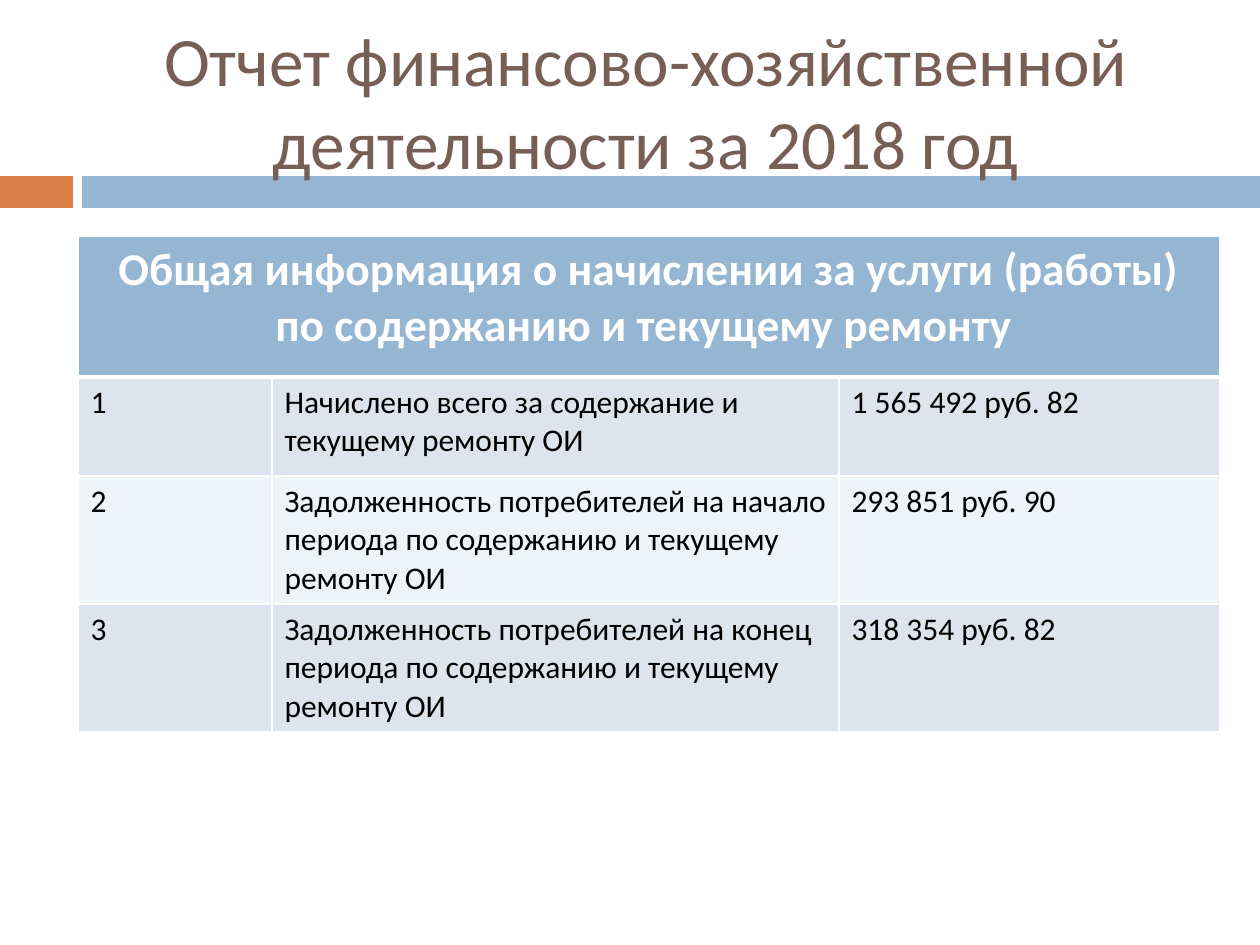
from dataclasses import dataclass

from lxml import etree
from pptx import Presentation
from pptx.dml.color import RGBColor
from pptx.enum.shapes import MSO_SHAPE
from pptx.enum.text import MSO_ANCHOR, PP_ALIGN
from pptx.oxml.ns import qn
from pptx.util import Pt

RECT = MSO_SHAPE.RECTANGLE
MIDDLE = MSO_ANCHOR.MIDDLE
CENTER, LEFT = PP_ALIGN.CENTER, PP_ALIGN.LEFT
EMU_PER_PX = 914400 / 126


@dataclass(frozen=True)
class Theme:
    font: str = "Calibri"
    title: str = "775F55"
    accent: str = "DD8047"
    main: str = "94B6D2"
    white: str = "FFFFFF"
    black: str = "000000"
    bands: tuple = ("DCE5EE", "EEF3F7")
    title_size: float = 39.6
    header_size: int = 26
    body_size: int = 18


THEME = Theme()
TITLE = "Отчет финансово-хозяйственной деятельности за 2018 год"
HEADER = "Общая информация о начислении за услуги (работы) по содержанию и текущему ремонту "
CHARGES = [
    ("1", "Начислено всего за содержание и текущему ремонту ОИ", "1 565 492 руб. 82"),
    ("2", "Задолженность потребителей на начало периода по содержанию и текущему ремонту ОИ", "293 851 руб. 90"),
    ("3", "Задолженность потребителей на конец периода по содержанию и текущему ремонту ОИ", "318 354 руб. 82"),
]


def px(n):
    return round(n * EMU_PER_PX)


def set_text(tf, text, size, color, align=LEFT, bold=False):
    tf.text = text
    tf.word_wrap = True
    p = tf.paragraphs[0]
    p.alignment = align
    font = p.runs[0].font
    font.name, font.size, font.bold = THEME.font, Pt(size), bold
    font.color.rgb = RGBColor.from_string(color)


def add_band(s, x, y, w, h):
    accent_w, gap = 73, 9
    main_x = accent_w + gap
    for left, width, color in (
        (x, accent_w, THEME.accent),
        (x + main_x, w - main_x, THEME.main),
    ):
        sp = s.shapes.add_shape(RECT, px(left), px(y), px(width), px(h))
        sp.shadow.inherit = False
        sp.fill.solid()
        sp.fill.fore_color.rgb = RGBColor.from_string(color)
        sp.line.fill.background()


def add_title(s, x, y, w, h):
    tf = s.shapes.add_textbox(px(x), px(y), px(w), px(h)).text_frame
    set_text(tf, TITLE, THEME.title_size, THEME.title, CENTER)
    tf.vertical_anchor = MIDDLE


def style_cell(cell, fill, bottom=1, top=1):
    cell.fill.solid()
    cell.fill.fore_color.rgb = RGBColor.from_string(fill)
    tc_pr = cell._tc.get_or_add_tcPr()
    edges = (("lnL", 1), ("lnR", 1), ("lnT", top), ("lnB", bottom))
    for i, (edge, width) in enumerate(edges):
        ln = etree.Element(qn(f"a:{edge}"), w=str(Pt(width)))
        solid = etree.SubElement(ln, qn("a:solidFill"))
        etree.SubElement(solid, qn("a:srgbClr"), val=THEME.white)
        tc_pr.insert(i, ln)


def add_charges_table(s, x, y, w, h):
    col_widths = (194, 567, w - 194 - 567)
    row_heights = (141, 99, 128, h - 141 - 99 - 128)
    table = s.shapes.add_table(
        len(row_heights), len(col_widths), px(x), px(y), px(w), px(h)
    ).table
    for col, width in zip(table.columns, col_widths):
        col.width = px(width)
    for row, height in zip(table.rows, row_heights):
        row.height = px(height)

    header = table.cell(0, 0)
    header.merge(table.cell(0, len(col_widths) - 1))
    set_text(header.text_frame, HEADER, THEME.header_size, THEME.white, CENTER, True)
    for cell in table.rows[0].cells:
        style_cell(cell, THEME.main, bottom=3)

    for r, values in enumerate(CHARGES, 1):
        fill = THEME.bands[(r - 1) % 2]
        for c, value in enumerate(values):
            cell = table.cell(r, c)
            set_text(cell.text_frame, value, THEME.body_size, THEME.black)
            style_cell(cell, fill, top=3 if r == 1 else 1)


def main():
    prs = Presentation()
    prs.slide_width, prs.slide_height = px(1260), px(945)
    s = prs.slides.add_slide(prs.slide_layouts[6])
    add_band(s, 0, 176, 1260, 32)
    add_title(s, 84, 32, 1124, 136)
    add_charges_table(s, 78, 236, 1142, 496)
    prs.save("out.pptx")


if __name__ == "__main__":
    main()
